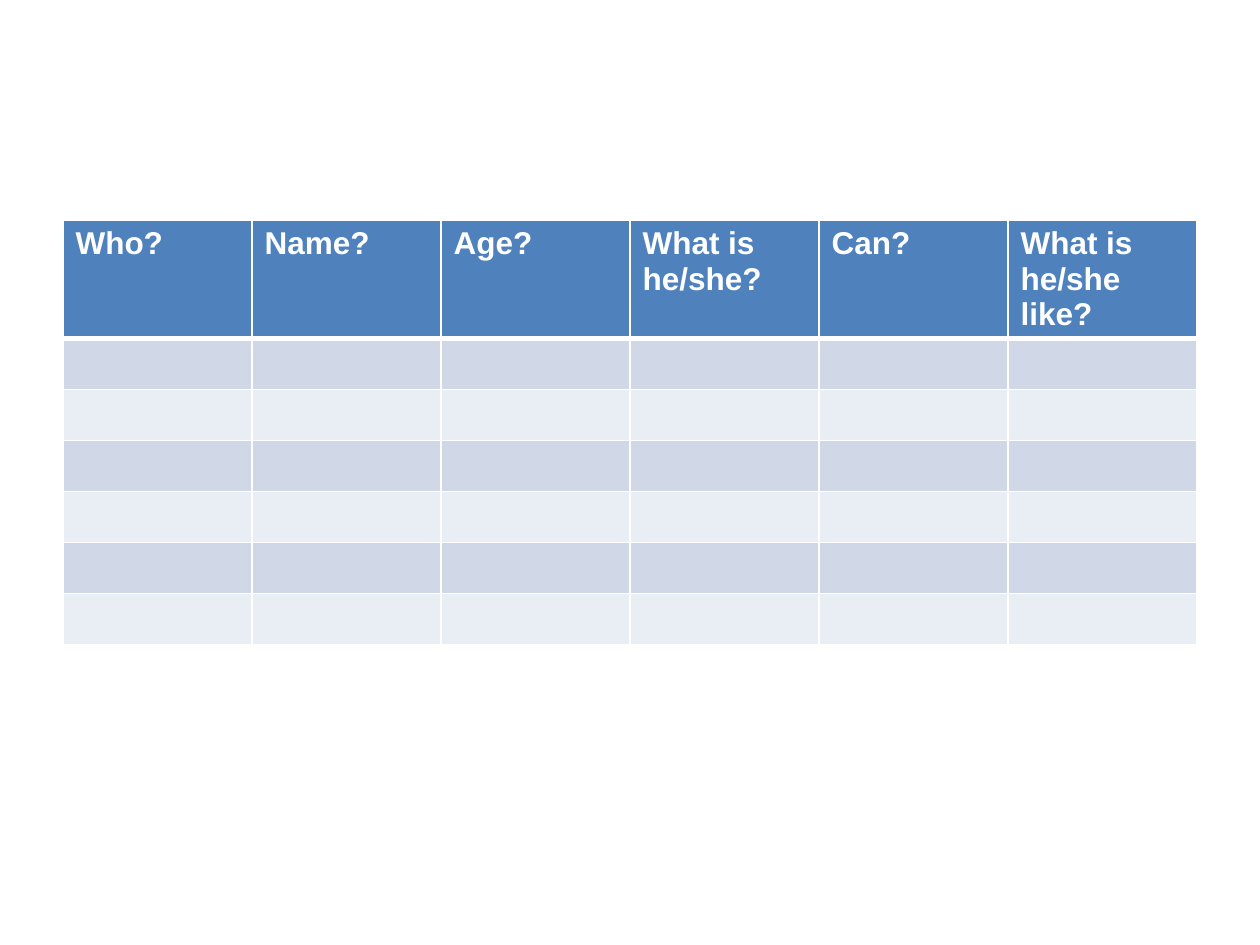
import pptx
import pptx.dml.color
import pptx.oxml.ns
import pptx.util
from lxml import etree

PX_PER_INCH = 126
HEADINGS = ["Who?", "Name?", "Age?", "What is he/she?", "Can?", "What is he/she like?"]
BODY_ROWS = 6
HEADER_FILL = "4F81BD"
BAND_FILLS = ["D0D8E8", "E9EDF4"]
WHITE = "FFFFFF"


def px(length):
    return pptx.util.Emu(round(length * 914400 / PX_PER_INCH))


def color(value):
    return pptx.dml.color.RGBColor.from_string(value)


def set_borders(cell, widths):
    """Draw white borders; widths maps a side (L, R, T, B) to points."""
    properties = cell._tc.get_or_add_tcPr()
    qn = pptx.oxml.ns.qn
    # Borders come before the fill in the cell properties
    for index, (side, width) in enumerate(widths.items()):
        line = etree.Element(qn(f"a:ln{side}"), w=str(pptx.util.Pt(width)))
        fill = etree.SubElement(line, qn("a:solidFill"))
        etree.SubElement(fill, qn("a:srgbClr"), val=WHITE)
        properties.insert(index, line)


def style_cell(cell, fill, top=1, bottom=1):
    cell.fill.solid()
    cell.fill.fore_color.rgb = color(fill)
    set_borders(cell, {"L": 1, "R": 1, "T": top, "B": bottom})
    font = cell.text_frame.paragraphs[0].font
    font.name = "Arial"
    font.size = pptx.util.Pt(18)


def add_question_table(slide, left, top, width, header_height, row_height):
    height = header_height + BODY_ROWS * row_height
    table = slide.shapes.add_table(
        BODY_ROWS + 1, len(HEADINGS), px(left), px(top), px(width), px(height)
    ).table
    for column in table.columns:
        column.width = px(width / len(HEADINGS))

    # Header row
    table.rows[0].height = px(header_height)
    for cell, heading in zip(table.rows[0].cells, HEADINGS):
        cell.text_frame.text = heading
        style_cell(cell, HEADER_FILL, bottom=3)
        font = cell.text_frame.paragraphs[0].runs[0].font
        font.name = "Arial"
        font.size = pptx.util.Pt(18)
        font.bold = True
        font.color.rgb = color(WHITE)

    # Empty banded rows for the answers
    for index in range(BODY_ROWS):
        row = table.rows[index + 1]
        row.height = px(row_height)
        for cell in row.cells:
            style_cell(cell, BAND_FILLS[index % 2], top=3 if index == 0 else 1)


def main():
    presentation = pptx.Presentation()
    presentation.slide_width = px(1260)
    presentation.slide_height = px(945)
    slide = presentation.slides.add_slide(presentation.slide_layouts[6])
    add_question_table(slide, left=63, top=220, width=1134, header_height=118, row_height=51)
    presentation.save("out.pptx")


if __name__ == "__main__":
    main()
